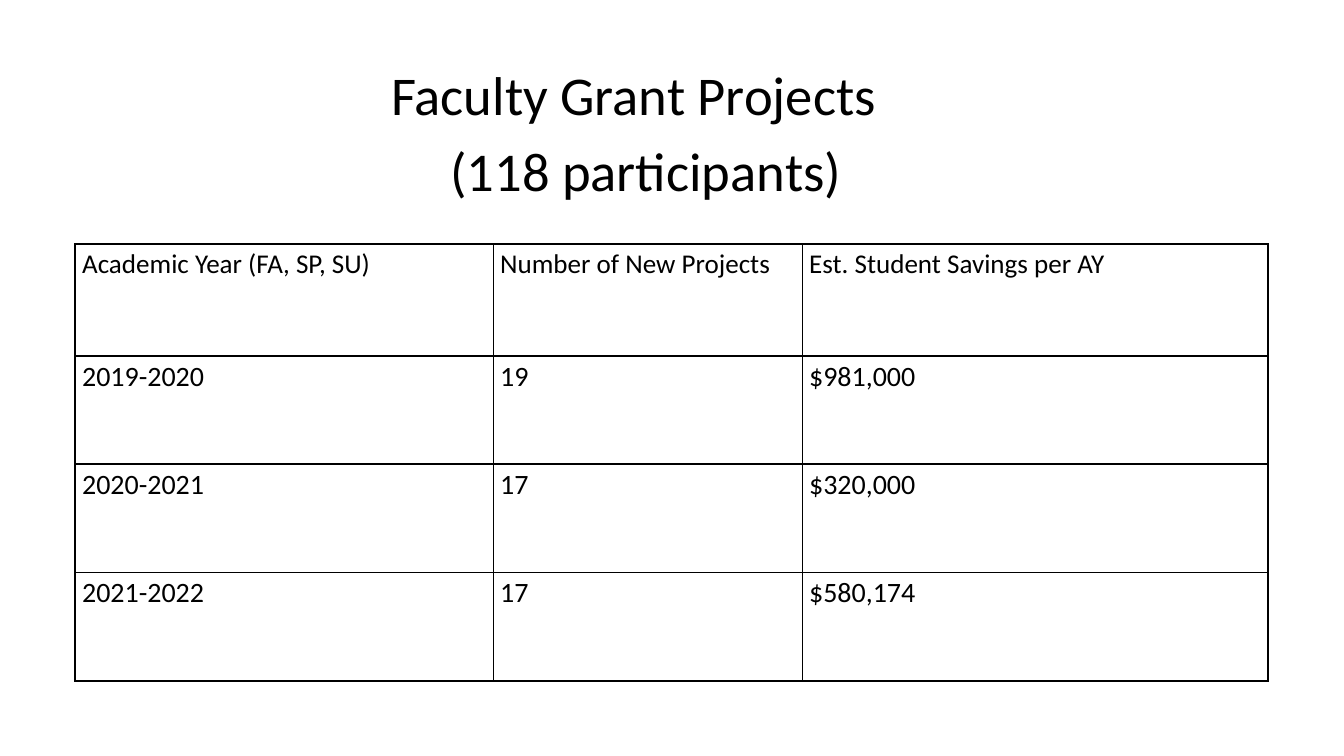
from lxml.etree import SubElement
from pptx import Presentation
from pptx.dml.color import RGBColor
from pptx.enum.text import MSO_AUTO_SIZE, PP_ALIGN
from pptx.oxml.ns import qn
from pptx.util import Cm, Pt

BLACK = RGBColor(0x00, 0x00, 0x00)
FONT = "Calibri"

COLUMN_WIDTHS = (15.8, 11.68, 17.6)
HEADER_HEIGHT, ROW_HEIGHT = 4.24, 4.09
PROJECT_ROWS = (
    ("Academic Year (FA, SP, SU)", "Number of New Projects", "Est. Student Savings per AY"),
    ("2019-2020", "19", "$981,000"),
    ("2020-2021", "17", "$320,000"),
    ("2021-2022", "17", "$580,174"),
)


def write_text(paragraph, text, size, align=PP_ALIGN.LEFT, line_spacing=None):
    paragraph.alignment = align
    if line_spacing:
        paragraph.line_spacing = Pt(line_spacing)
    run = paragraph.add_run()
    run.text = text
    run.font.name = FONT
    run.font.size = Pt(size)
    run.font.color.rgb = BLACK


def set_borders(cell, color, width):
    properties = cell._tc.get_or_add_tcPr()
    # Border lines come before the fill in the cell properties
    for position, side in enumerate(("a:lnL", "a:lnR", "a:lnT", "a:lnB")):
        line = SubElement(properties, qn(side), w=str(Pt(width)))
        fill = SubElement(line, qn("a:solidFill"))
        SubElement(fill, qn("a:srgbClr"), val=str(color))
        properties.insert(position, line)


def add_title(slide, left, top, width, height):
    shape = slide.shapes.add_textbox(Cm(left), Cm(top), Cm(width), Cm(height))
    frame = shape.text_frame
    frame.word_wrap = True
    frame.auto_size = MSO_AUTO_SIZE.SHAPE_TO_FIT_TEXT
    # The first line is centred slightly left of the second
    offset = Cm(0.93)
    frame.margin_left = frame.margin_top = frame.margin_bottom = 0
    frame.margin_right = offset
    title_format = dict(size=58.5, align=PP_ALIGN.CENTER, line_spacing=81.9)
    write_text(frame.paragraphs[0], "Faculty Grant Projects", **title_format)
    second_line = frame.add_paragraph()
    write_text(second_line, "(118 participants)", **title_format)
    second_line._p.get_or_add_pPr().set("marL", str(offset))


def add_projects_table(slide, left, top, width, height):
    table = slide.shapes.add_table(
        len(PROJECT_ROWS), len(COLUMN_WIDTHS), Cm(left), Cm(top), Cm(width), Cm(height)
    ).table
    table.first_row = table.horz_banding = False
    for column, column_width in zip(table.columns, COLUMN_WIDTHS):
        column.width = Cm(column_width)
    for row_index, values in enumerate(PROJECT_ROWS):
        is_header = row_index == 0
        table.rows[row_index].height = Cm(HEADER_HEIGHT if is_header else ROW_HEIGHT)
        for column_index, value in enumerate(values):
            cell = table.cell(row_index, column_index)
            cell.fill.background()
            set_borders(cell, BLACK, 2.25)
            write_text(cell.text_frame.paragraphs[0], value, size=29 if is_header else 30)


def main():
    presentation = Presentation()
    presentation.slide_width = Cm(50.8)
    presentation.slide_height = Cm(28.575)
    slide = presentation.slides.add_slide(presentation.slide_layouts[6])

    # Table of projects by academic year
    table_height = HEADER_HEIGHT + ROW_HEIGHT * (len(PROJECT_ROWS) - 1)
    add_projects_table(slide, 2.85, 9.22, sum(COLUMN_WIDTHS), table_height)
    # Title above the table
    add_title(slide, 1.88, 1.88, 45.08, 5.66)

    presentation.save("out.pptx")


if __name__ == "__main__":
    main()
